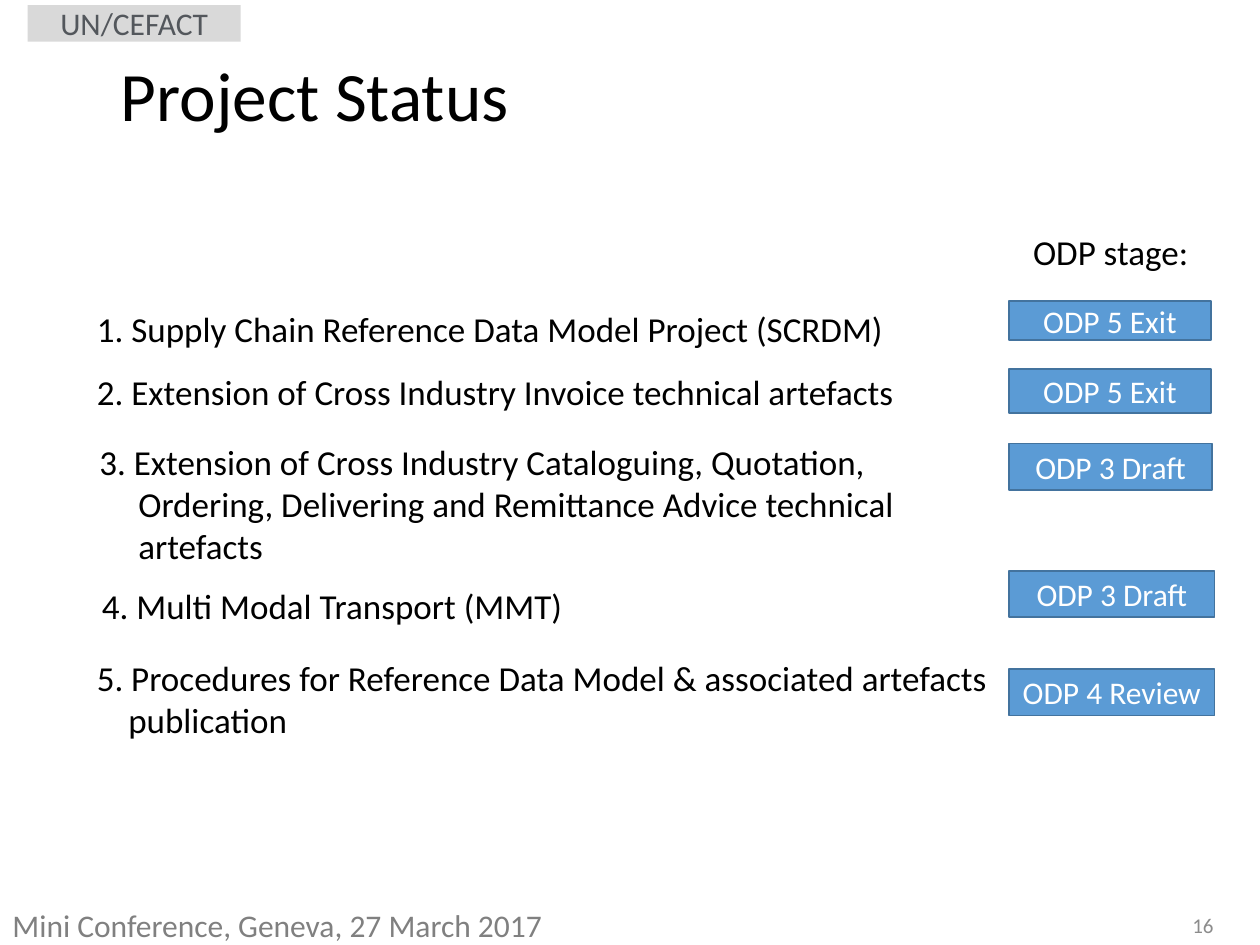
import pptx
import pptx.dml.color
import pptx.enum.shapes
import pptx.enum.text
import pptx.util

Inches = pptx.util.Inches
Pt = pptx.util.Pt
Align = pptx.enum.text.PP_ALIGN
Anchor = pptx.enum.text.MSO_ANCHOR


def colour(value):
    return pptx.dml.color.RGBColor.from_string(value)


class StatusPage:
    font = "Calibri"
    black = "000000"
    stage_fill = "5B9BD5"
    stage_line = "43739E"

    def __init__(self, page):
        self.page = page

    def fill_text(self, shape, text, size, ink, hanging=0, align=Align.LEFT,
                  anchor=Anchor.TOP, wrap=True, spacing=None):
        frame = shape.text_frame
        frame.word_wrap = wrap
        frame.vertical_anchor = anchor
        para = frame.paragraphs[0]
        para.text = text
        for name, value in {"alignment": align, "line_spacing": spacing}.items():
            setattr(para, name, value)
        if hanging:
            properties = para._p.get_or_add_pPr()
            properties.set("marL", str(Inches(hanging)))
            properties.set("indent", str(-Inches(hanging)))
        for span in para.runs:
            for name, value in {"name": self.font, "size": Pt(size)}.items():
                setattr(span.font, name, value)
            span.font.color.rgb = colour(ink)

    def text(self, place, text, size=20, ink=black, **layout):
        box = self.page.shapes.add_textbox(*map(Inches, place))
        self.fill_text(box, text, size, ink, **layout)

    def label(self, place, text, fill, ink, line=None):
        box = self.page.shapes.add_shape(
            pptx.enum.shapes.MSO_SHAPE.RECTANGLE, *map(Inches, place))
        box.shadow.inherit = False
        box.fill.solid()
        box.fill.fore_color.rgb = colour(fill)
        if line:
            box.line.color.rgb = colour(line)
            box.line.width = Pt(1)
        else:
            box.line.fill.background()
        self.fill_text(box, text, 18, ink, align=Align.CENTER,
                       anchor=Anchor.MIDDLE)

    def stage(self, top, width, height, text):
        self.label((8.01, top, width, height), text,
                   self.stage_fill, "FFFFFF", self.stage_line)


def main():
    deck = pptx.Presentation()
    deck.slide_width = Inches(10)
    deck.slide_height = Inches(7.5)
    status = StatusPage(deck.slides.add_slide(deck.slide_layouts[6]))

    status.label((0.22, 0.04, 1.69, 0.29), "UN/CEFACT", "D9D9D9", "53575C")
    status.text((0.86, 0.47, 8.75, 0.63), "Project Status", 39.6,
                anchor=Anchor.MIDDLE, spacing=0.9)
    status.text((8.1, 1.78, 1.45, 0.44), "ODP stage:", wrap=False)

    projects = [
        ((0.67, 2.39, 7.48, 0.44), 0,
         "1. Supply Chain Reference Data Model Project (SCRDM)"),
        ((0.67, 2.89, 7.48, 0.44), 0,
         "2. Extension of Cross Industry Invoice technical artefacts"),
        ((0.69, 3.45, 7.43, 1.11), 0.31,
         "3. Extension of Cross Industry Cataloguing, Quotation,\v"
         "Ordering, Delivering and Remittance Advice technical\vartefacts"),
        ((0.71, 4.59, 7.48, 0.44), 0, "4. Multi Modal Transport (MMT)"),
        ((0.67, 5.16, 7.34, 0.77), 0.25,
         "5. Procedures for Reference Data Model & associated artefacts\v"
         "publication"),
    ]
    for place, hanging, text in projects:
        status.text(place, text, hanging=hanging)

    stages = [
        (2.39, 1.6, 0.31, "ODP 5 Exit"),
        (2.93, 1.6, 0.35, "ODP 5 Exit"),
        (3.52, 1.61, 0.37, "ODP 3 Draft"),
        (4.53, 1.63, 0.37, "ODP 3 Draft"),
        (5.31, 1.63, 0.37, "ODP 4 Review"),
    ]
    for stage in stages:
        status.stage(*stage)

    status.text((0, 7.14, 5.68, 0.4), "Mini Conference, Geneva, 27 March 2017",
                18, "808080")
    status.text((6.73, 7.14, 3, 0.4), "16", 12, "8C8C8C",
                align=Align.RIGHT, anchor=Anchor.MIDDLE)
    deck.save("out.pptx")


if __name__ == "__main__":
    main()
